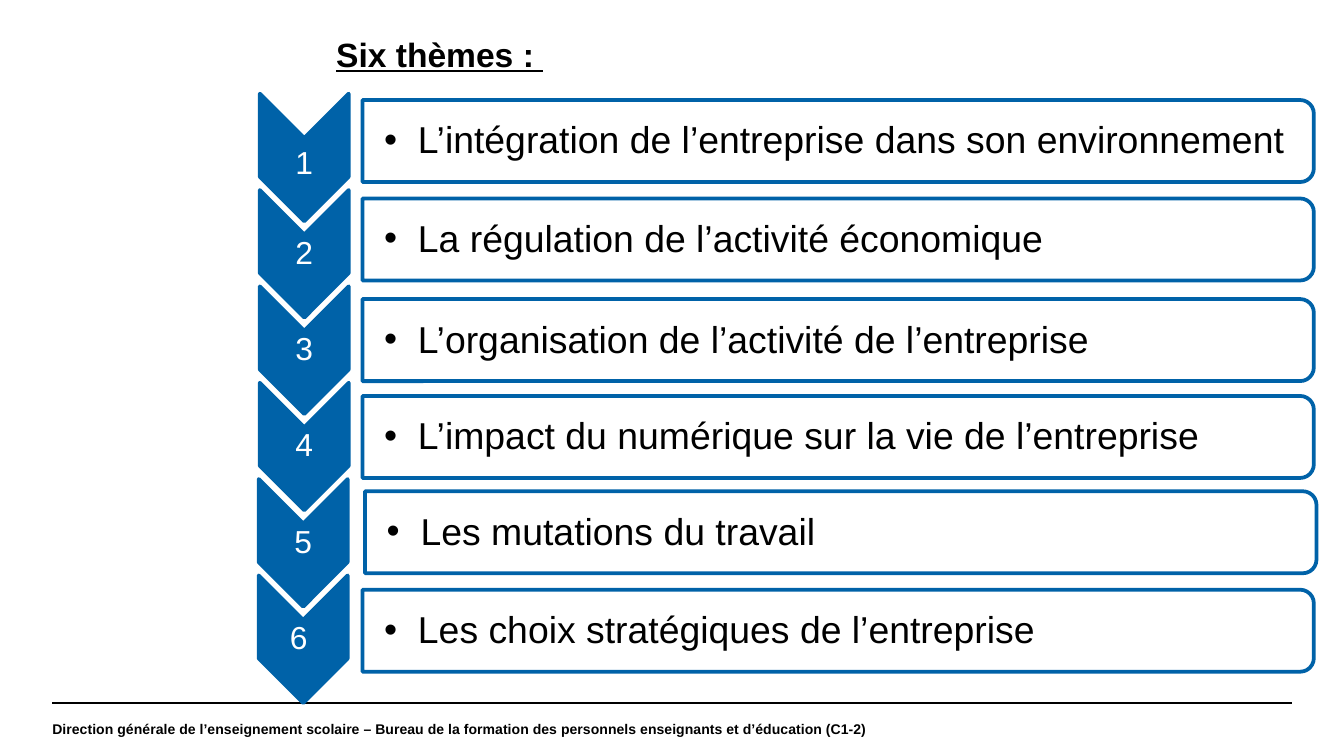
import pptx
import pptx.dml.color
import pptx.enum.shapes
import pptx.enum.text
import pptx.oxml
import pptx.oxml.ns
import pptx.util
import lxml.etree

Cm = pptx.util.Cm
Pt = pptx.util.Pt
Kind = pptx.enum.shapes.MSO_SHAPE
Align = pptx.enum.text.PP_ALIGN
Anchor = pptx.enum.text.MSO_ANCHOR
qn = pptx.oxml.ns.qn

COLORS = {"blue": "0062A8", "white": "FFFFFF", "black": "000000"}
THEMES = [
    ("1", "L’intégration de l’entreprise dans son environnement"),
    ("2", "La régulation de l’activité économique"),
    ("3", "L’organisation de l’activité de l’entreprise"),
    ("4", "L’impact du numérique sur la vie de l’entreprise"),
    ("5", "Les mutations du travail"),
    ("6 ", "Les choix stratégiques de l’entreprise"),
]
BARS = [(6.85, 1.89), (6.85, 3.75), (6.85, 5.65),
        (6.85, 7.48), (6.9, 9.28), (6.85, 11.14)]


def rgb(name):
    return pptx.dml.color.RGBColor.from_string(COLORS[name])


def style(para, size, color, bold=False, line=False):
    for run in para.runs:
        font = run.font
        font.name = "Arial"
        font.size = Pt(size)
        font.bold = bold
        font.underline = line
        font.color.rgb = rgb(color)


def write(slide, box, text, pads):
    frame = slide.shapes.add_textbox(*map(Cm, box)).text_frame
    frame.word_wrap = True
    frame.vertical_anchor = Anchor.MIDDLE
    frame.margin_left = Cm(pads[0])
    frame.margin_top = frame.margin_right = frame.margin_bottom = Cm(pads[1])
    frame.text = text
    return frame.paragraphs[0]


def turn(slide, kind, box, fill):
    left, top, width, height = box
    shift = (width - height) / 2
    shape = slide.shapes.add_shape(
        kind, Cm(left + shift), Cm(top - shift), Cm(height), Cm(width))
    shape.rotation = 90
    shape.shadow.inherit = False
    shape.fill.solid()
    shape.fill.fore_color.rgb = rgb(fill)
    shape.line.color.rgb = rgb("blue")
    shape.line.width = Pt(2)
    return shape


def add_bar(slide, box, text):
    left, top, width, height = box
    shape = turn(slide, Kind.ROUND_2_SAME_RECTANGLE, box, "white")
    tint = shape.element.spPr.find(qn("a:solidFill"))[0]
    lxml.etree.SubElement(tint, qn("a:alpha")).set("val", "90000")
    para = write(slide, (left, top + 0.09, width - 0.08, height - 0.15),
                 text, (0.41, 0.03))
    para.line_spacing = 0.9
    props = para._p.get_or_add_pPr()
    props.set("marL", str(Cm(0.64)))
    props.set("indent", str(-Cm(0.64)))
    lxml.etree.SubElement(props, qn("a:buFont")).set("typeface", "Arial")
    lxml.etree.SubElement(props, qn("a:buChar")).set("char", "•")
    style(para, 20, "black")


def add_step(slide, box, text, drop):
    left, top, width, height = box
    turn(slide, Kind.CHEVRON, box, "blue")
    para = write(slide, (left, top + drop, width, 0.71), text, (0.03, 0.03))
    para.alignment = Align.CENTER
    para.line_spacing = 0.9
    style(para, 17, "white")


def add_title(slide, box):
    title = slide.shapes.title
    title.left, title.top, title.width, title.height = map(Cm, box)
    frame = title.text_frame
    frame.auto_size = pptx.enum.text.MSO_AUTO_SIZE.NONE
    frame.vertical_anchor = Anchor.TOP
    frame.text = "Six thèmes : "
    frame.paragraphs[0].alignment = Align.LEFT
    style(frame.paragraphs[0], 18, "black", True, True)


def add_foot(slide, box):
    left, top, width, height = box
    rule = slide.shapes.add_connector(
        pptx.enum.shapes.MSO_CONNECTOR.STRAIGHT,
        Cm(left), Cm(top), Cm(left + 23.42), Cm(top))
    rule.line.color.rgb = rgb("black")
    rule.line.width = Pt(0.8)
    lxml.etree.SubElement(rule.element.spPr, qn("a:effectLst"))
    para = write(slide, box,
                 "Direction générale de l’enseignement scolaire – Bureau de la "
                 "formation des personnels enseignants et d’éducation (C1-2)",
                 (0, 0))
    style(para, 7.5, "black", True)


def main():
    deck = pptx.Presentation()
    deck.slide_width = Cm(25.4)
    deck.slide_height = Cm(14.28)
    slide = deck.slides.add_slide(deck.slide_layouts[5])
    add_foot(slide, (0.99, 13.28, 23.7, 0.99))
    for (left, top), (_, text) in zip(BARS, THEMES):
        add_bar(slide, (left, top, 17.98, 1.55), text)
    add_title(slide, (6.1, 0.51, 8.99, 1.02))
    for i, (mark, _) in enumerate(THEMES):
        left = 4.91 if i < 4 else 4.89
        add_step(slide, (left, 1.77 + 1.82 * i, 1.68, 2.41), mark,
                 0.85 if i else 0.98)
    deck.save("out.pptx")


if __name__ == "__main__":
    main()
